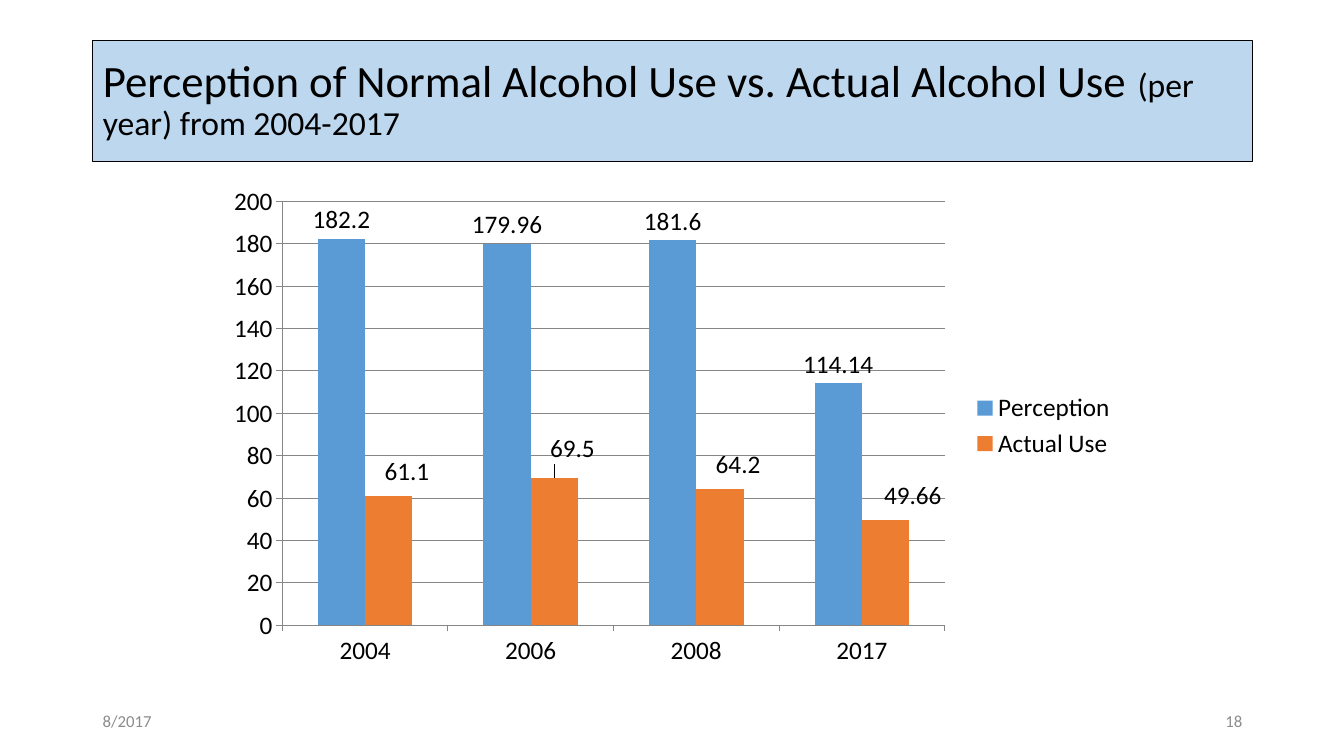
from lxml import etree
from pptx import Presentation
from pptx import util as u
from pptx.chart import data as cd
from pptx.dml import color
from pptx.enum import chart as ch, text
from pptx.oxml import ns

# Content
TITLE = [("Perception of Normal Alcohol Use vs. Actual Alcohol Use ", 32),
         ("(per year) from 2004-2017", 24)]
YEARS = ["2004", "2006", "2008", "2017"]
SERIES = [("Perception", [182.2, 179.96, 181.6, 114.14], "perception"),
          ("Actual Use", [61.1, 69.5, 64.2, 49.66], "actual")]
FOOTER = [("8/2017", text.PP_ALIGN.LEFT), ("18", text.PP_ALIGN.RIGHT)]
COLORS = {"ink": "000000", "band": "BDD7EE", "perception": "5B9BD5",
          "actual": "ED7D31", "axis": "868686", "footer": "8C8C8C"}
FONT = "Calibri"

# Geometry: inches for the slide, shares of the chart for its parts
WIDTH, HEIGHT, MARGIN = 13.33, 7.5, 0.92
BAND_WIDTH, FOOTER_WIDTH = 11.5, 3
PLOT_AREA = {"x": 0.07, "y": 0.05, "w": 0.73, "h": 0.85}
ACTUAL_LABEL_SHIFTS = [(0.02, -0.01), (0.02, -0.02), (0.02, -0.01), (0.03, -0.01)]


def rgb(name):
    return color.RGBColor.from_string(COLORS[name])


def style(font, size, name="ink"):
    font.name, font.size = FONT, u.Pt(size)
    font.color.rgb = rgb(name)


def add_run(p, words, size, name="ink"):
    r = p.add_run()
    r.text = words
    style(r.font, size, name)


def manual_layout(**values):
    layout = etree.Element(ns.qn("c:layout"))
    manual = etree.SubElement(layout, ns.qn("c:manualLayout"))
    for tag, value in values.items():
        etree.SubElement(manual, ns.qn("c:" + tag)).set("val", str(value))
    return layout


prs = Presentation()
prs.slide_width, prs.slide_height = u.Inches(WIDTH), u.Inches(HEIGHT)
s = prs.slides.add_slide(prs.slide_layouts[5])

# Title band
sp = s.shapes.title
sp.left, sp.top, sp.width, sp.height = map(u.Inches, (MARGIN, 0.4, BAND_WIDTH, 1.2))
sp.fill.solid()
sp.fill.fore_color.rgb = rgb("band")
sp.line.color.rgb = rgb("ink")
sp.line.width = u.Pt(0.75)
tf = sp.text_frame
tf.word_wrap, tf.auto_size = True, text.MSO_AUTO_SIZE.NONE
tf.vertical_anchor = text.MSO_ANCHOR.MIDDLE
p = tf.paragraphs[0]
p.alignment, p.line_spacing = text.PP_ALIGN.LEFT, 0.9
for words, size in TITLE:
    add_run(p, words, size)

# Column chart
data = cd.CategoryChartData()
data.categories = YEARS
for name, values, _ in SERIES:
    data.add_series(name, values)
chart = s.shapes.add_chart(ch.XL_CHART_TYPE.COLUMN_CLUSTERED,
                           *map(u.Inches, (2.17, 1.75, 9, 4.95)), data).chart
style(chart.font, 18)
chart.has_title = False
chart.has_legend = True
chart.legend.position = ch.XL_LEGEND_POSITION.RIGHT
chart.legend.include_in_layout = False
plot = chart.plots[0]
plot.gap_width, plot.overlap, plot.vary_by_categories = 150, 0, False

for axis in (chart.category_axis, chart.value_axis):
    axis.major_tick_mark = ch.XL_TICK_MARK.OUTSIDE
    axis.minor_tick_mark = ch.XL_TICK_MARK.NONE
    axis.format.line.color.rgb = rgb("axis")
chart.value_axis.minimum_scale, chart.value_axis.maximum_scale = 0, 200
chart.value_axis.major_unit = 20
chart.value_axis.has_major_gridlines = True
chart.value_axis.major_gridlines.format.line.color.rgb = rgb("axis")

for series, (_, _, name) in zip(plot.series, SERIES):
    series.format.fill.solid()
    series.format.fill.fore_color.rgb = rgb(name)
    labels = series.data_labels
    labels.show_value = True
    labels.position = ch.XL_LABEL_POSITION.OUTSIDE_END
    style(labels.font, 18)

# Labels of actual use stand a little right of and above their columns
actual = plot.series[1]
for i in range(len(YEARS)):
    label = actual.points[i].data_label
    label.position = ch.XL_LABEL_POSITION.OUTSIDE_END
    style(label.font, 18)
for label, (x, y) in zip(actual._element.xpath(".//c:dLbl"), ACTUAL_LABEL_SHIFTS):
    label.insert(1, manual_layout(x=x, y=y))

# Fixed plot area
area = chart._chartSpace.xpath(".//c:plotArea")[0]
for old in area.findall(ns.qn("c:layout")):
    area.remove(old)
area.insert(0, manual_layout(layoutTarget="inner", xMode="edge", yMode="edge",
                             **PLOT_AREA))

# Footer: date at the left edge of the band, number at the right
for i, (words, align) in enumerate(FOOTER):
    left = MARGIN + i * (BAND_WIDTH - FOOTER_WIDTH)
    tf = s.shapes.add_textbox(*map(u.Inches, (left, 6.95, FOOTER_WIDTH, 0.4))).text_frame
    tf.word_wrap = True
    tf.vertical_anchor = text.MSO_ANCHOR.MIDDLE
    p = tf.paragraphs[0]
    p.alignment = align
    add_run(p, words, 12, "footer")

prs.save("out.pptx")
